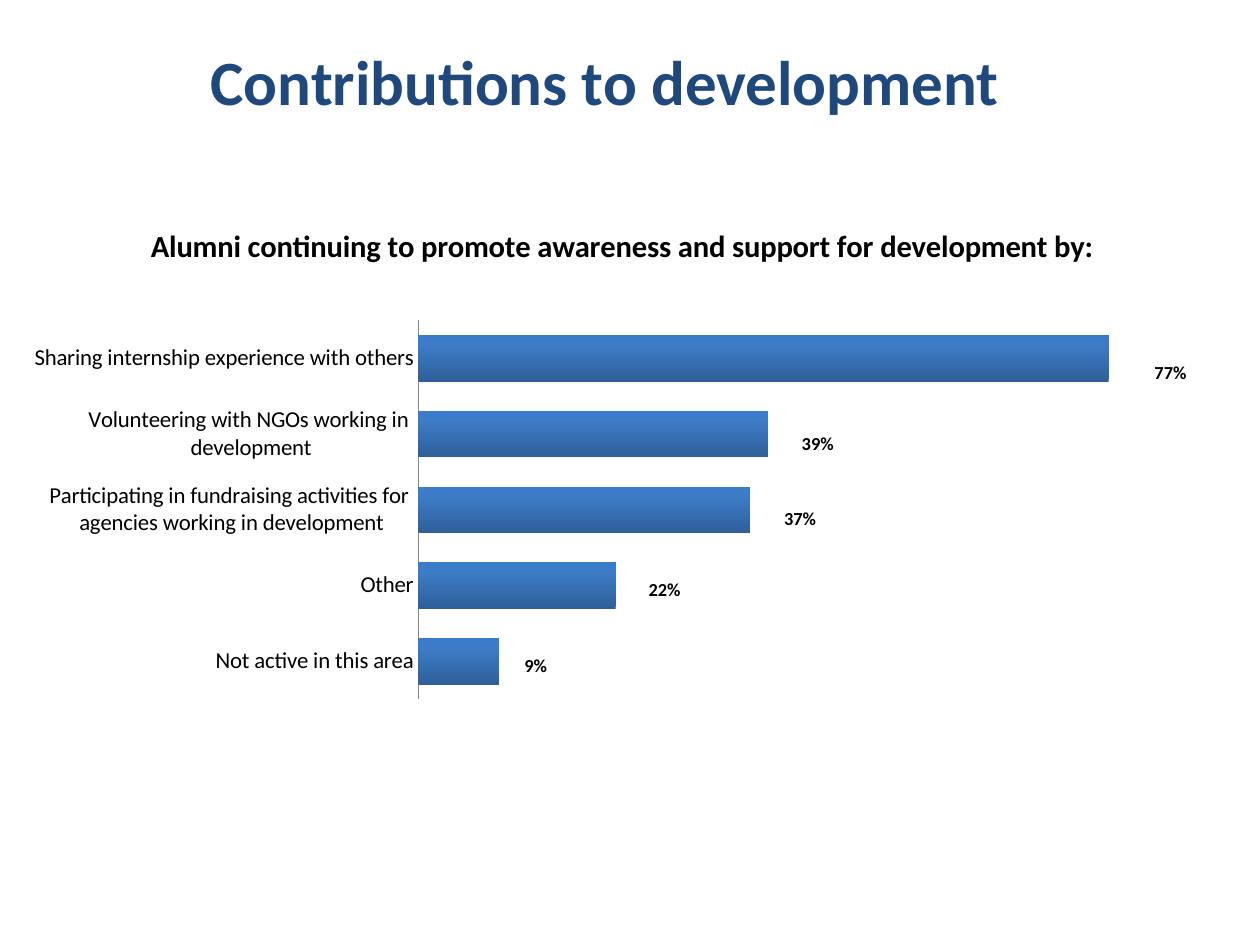
from lxml import etree
from copy import deepcopy

from pptx import Presentation
from pptx.chart.data import CategoryChartData
from pptx.dml.color import RGBColor
from pptx.enum.chart import XL_CHART_TYPE, XL_TICK_LABEL_POSITION, XL_TICK_MARK
from pptx.enum.text import MSO_ANCHOR, PP_ALIGN
from pptx.oxml.ns import qn
from pptx.util import Inches, Pt

BAR_STACKED = XL_CHART_TYPE.BAR_STACKED
NO_TICK = XL_TICK_MARK.NONE
NEXT_TO_AXIS = XL_TICK_LABEL_POSITION.NEXT_TO_AXIS
CENTER = PP_ALIGN.CENTER
MIDDLE = MSO_ANCHOR.MIDDLE

TITLE_ONLY = 5
AXIS_MAX = 0.9
PLOT = dict(x=0.33, y=0.23, w=0.65, h=0.75)
BAR_GRADIENT = [(0, "2F5F99"), (0.8, "3D7CC7"), (1, "3A7CCB")]

# category, value, label's distance right of the bar's end, and its drop
ACTIVITIES = [
    ("Sharing internship experience with others", 0.77, 0.05, 0.03),
    ("Volunteering with NGOs working in \ndevelopment", 0.39, 0.04, 0.02),
    ("Participating in fundraising activities for \nagencies working in development",
     0.37, 0.04, 0.02),
    ("Other", 0.22, 0.04, 0.01),
    ("Not active in this area", 0.09, 0.03, 0.01),
]


def rgb(value):
    return RGBColor.from_string(value)


def style_font(font, size, color="000000", bold=False, name="Calibri"):
    font.size, font.bold, font.name = Pt(size), bold, name
    font.color.rgb = rgb(color)


def write(tf, text, align=CENTER, wrap=True, **font):
    tf.word_wrap = wrap
    p = tf.paragraphs[0]
    p.alignment = align
    r = p.add_run()
    r.text = text
    style_font(r.font, **font)


def place(parent, index, inner=False, edge=True, **shares):
    """Give a chart part a manual layout, in shares of the chart's size."""
    for old in parent.findall(qn("c:layout")):
        parent.remove(old)
    layout = etree.Element(qn("c:layout"))
    manual = etree.SubElement(layout, qn("c:manualLayout"))
    values = {"layoutTarget": "inner"} if inner else {}
    if edge:
        values.update(xMode="edge", yMode="edge")
    values.update(shares)
    for tag, value in values.items():
        etree.SubElement(manual, qn(f"c:{tag}")).set("val", str(value))
    parent.insert(index, layout)


def hide_leader_lines(chart):
    for lines in chart._chartSpace.iter(qn("c:showLeaderLines")):
        lines.set("val", "0")


def fill_gradient(fill, stops, angle):
    fill.gradient()
    fill.gradient_angle = angle
    gs_list = fill._fill._gradFill.gsLst
    while len(gs_list) < len(stops):
        gs_list.append(deepcopy(gs_list[0]))
    for stop, (position, color) in zip(fill.gradient_stops, stops):
        stop.position = position
        stop.color.rgb = rgb(color)


class Deck:
    def __init__(self, width, height):
        self.prs = Presentation()
        self.prs.slide_width, self.prs.slide_height = Inches(width), Inches(height)
        self.s = self.prs.slides.add_slide(self.prs.slide_layouts[TITLE_ONLY])

    def box(self, x, y, w, h):
        """Turn shares of the slide's size into lengths."""
        width, height = self.prs.slide_width, self.prs.slide_height
        return int(x * width), int(y * height), int(w * width), int(h * height)

    def title(self, text, *shares):
        sp = self.s.shapes.title
        sp.left, sp.top, sp.width, sp.height = self.box(*shares)
        sp.text_frame.vertical_anchor = MIDDLE
        write(sp.text_frame, text, size=36, color="1F497D", bold=True)

    def bar_chart(self, title, rows, *shares):
        data = CategoryChartData(number_format="0%")
        data.categories = [row[0] for row in rows]
        data.add_series("Series 1", [row[1] for row in rows])
        chart = self.s.shapes.add_chart(BAR_STACKED, *self.box(*shares), data).chart
        chart.has_legend = False
        style_font(chart.font, 10)

        chart.has_title = True
        write(chart.chart_title.text_frame, title, wrap=False, size=17.5, bold=True)
        place(chart.chart_title._element, 1, x=0.11, y=0.03)
        place(chart._chartSpace.chart.plotArea, 0, inner=True, **PLOT)

        axis = chart.category_axis
        axis.reverse_order = True
        axis.major_tick_mark = axis.minor_tick_mark = NO_TICK
        axis.tick_label_position = NEXT_TO_AXIS
        axis.format.line.color.rgb = rgb("868686")
        axis.format.line.width = Pt(1)
        style_font(axis.tick_labels.font, 13)

        axis = chart.value_axis
        axis.minimum_scale, axis.maximum_scale = 0, AXIS_MAX
        axis.has_major_gridlines = False
        axis.visible = False

        plot = chart.plots[0]
        plot.gap_width, plot.overlap, plot.vary_by_categories = 63, 100, False

        series = plot.series[0]
        fill_gradient(series.format.fill, BAR_GRADIENT, 90)
        labels = series.data_labels
        labels.show_value = True
        labels.number_format, labels.number_format_is_linked = "0%", False
        style_font(labels.font, 10.5, bold=True)
        for i, (_, value, gap, drop) in enumerate(rows):
            label = series.points[i].data_label
            style_font(label.font, 10.5, bold=True)
            half_bar = value / AXIS_MAX * PLOT["w"] / 2
            place(label._dLbl, 1, edge=False, x=round(half_bar + gap, 3), y=drop)
        hide_leader_lines(chart)


def main():
    deck = Deck(10, 7.5)
    deck.title("Contributions to development", 0.05, 0.045, 0.86, 0.08)
    deck.bar_chart(
        "Alumni continuing to promote awareness and support for development by:",
        ACTIVITIES, 0.007, 0.216, 0.985, 0.535)
    deck.prs.save("out.pptx")


if __name__ == "__main__":
    main()
